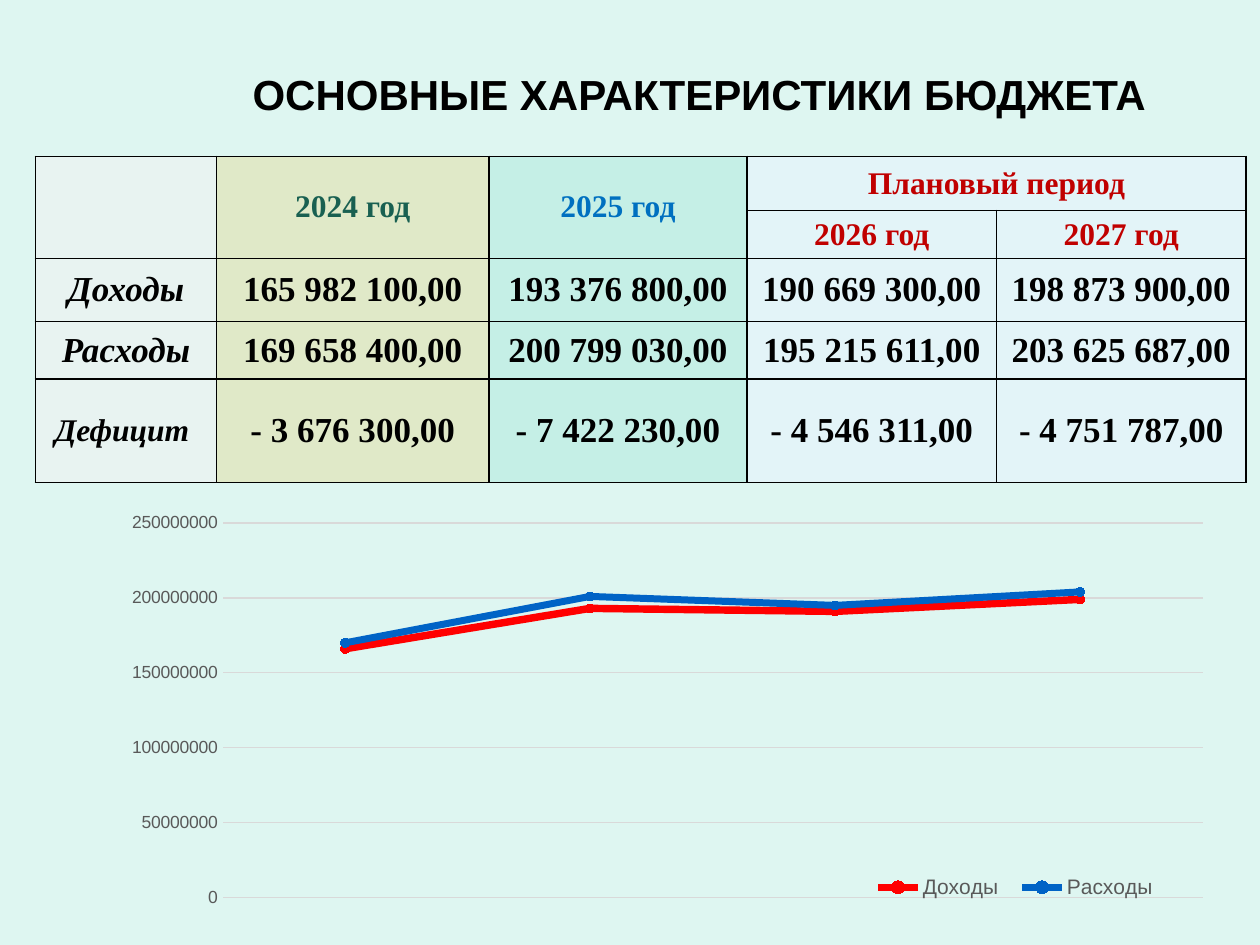
from dataclasses import dataclass

from lxml import etree
from pptx import Presentation
from pptx.chart import data as chart_data
from pptx.dml.color import RGBColor
from pptx.enum import chart as ch, text
from pptx.oxml import ns
from pptx.util import Inches, Pt


@dataclass(frozen=True)
class Theme:
    background: str = "DEF6F1"
    ink: str = "000000"
    chart_text: str = "595959"
    grid: str = "D9D9D9"
    past: str = "196051"
    current: str = "0070C0"
    planned: str = "C00000"
    income: str = "FF0000"
    expense: str = "0063C6"
    sans: str = "Arial"
    serif: str = "Times New Roman"
    title_size: int = 24
    header_size: int = 18
    value_size: int = 20
    axis_size: int = 10
    legend_size: int = 12


THEME = Theme()

# Fill colour and opacity in percent for each table column
COLUMN_FILLS = [("F2F2F2", 53), ("E6CC6C", 30), ("8CE1CF", 30),
                ("E8F4FF", 50), ("E8F4FF", 50)]
COLUMN_WIDTHS = [1.44, 2.16, 2.05, 1.98, 1.98]
ROW_HEIGHTS = [0.43, 0.38, 0.5, 0.46, 0.82]
HEADERS = [
    (0, 1, "2024 год", THEME.past),
    (0, 2, "2025 год", THEME.current),
    (0, 3, "Плановый период", THEME.planned),
    (1, 3, "2026 год", THEME.planned),
    (1, 4, "2027 год", THEME.planned),
]
BUDGET_ROWS = [
    ("Доходы", "165 982 100,00", "193 376 800,00", "190 669 300,00", "198 873 900,00"),
    ("Расходы", "169 658 400,00", "200 799 030,00", "195 215 611,00", "203 625 687,00"),
    ("Дефицит ", "- 3 676 300,00", "- 7 422 230,00", "- 4 546 311,00", "- 4 751 787,00"),
]
MILLION = 1_000_000
# Name, values in millions, colour, line width
SERIES = [
    ("Доходы", (166, 193, 191, 199), THEME.income, 4.25),
    ("Расходы", (170, 201, 195, 204), THEME.expense, 4),
]


def rgb(color):
    return RGBColor.from_string(color)


def set_font(font, name, size, color, bold=False, italic=False):
    font.name = name
    font.size = Pt(size)
    font.bold = bold
    font.italic = italic
    font.color.rgb = rgb(color)


def add_title(slide, words):
    box = slide.shapes.add_textbox(Inches(1.55), Inches(0.4), Inches(8), Inches(0.69))
    frame = box.text_frame
    frame.word_wrap = True
    frame.vertical_anchor = text.MSO_ANCHOR.MIDDLE
    frame.text = words
    para = frame.paragraphs[0]
    para.alignment = text.PP_ALIGN.CENTER
    set_font(para.runs[0].font, THEME.sans, THEME.title_size, THEME.ink, bold=True)


def style_cell(cell, color, opacity):
    """Give a cell its translucent fill, thin borders and margins."""
    cell.fill.solid()
    cell.fill.fore_color.rgb = rgb(color)
    properties = cell._tc.get_or_add_tcPr()
    fill_color = properties.find(f".//{ns.qn('a:srgbClr')}")
    etree.SubElement(fill_color, ns.qn("a:alpha"), val=str(opacity * 1000))
    for position, side in enumerate(("lnL", "lnR", "lnT", "lnB")):
        border = etree.Element(ns.qn(f"a:{side}"), w=str(Pt(1)))
        solid = etree.SubElement(border, ns.qn("a:solidFill"))
        etree.SubElement(solid, ns.qn("a:srgbClr"), val=THEME.ink)
        properties.insert(position, border)
    cell.margin_left = cell.margin_right = Inches(0.07)
    cell.margin_top = cell.margin_bottom = 0
    cell.vertical_anchor = text.MSO_ANCHOR.MIDDLE


def write_cell(cell, words, size, color, italic=False):
    cell.text_frame.text = words
    para = cell.text_frame.paragraphs[0]
    para.alignment = text.PP_ALIGN.CENTER
    set_font(para.runs[0].font, THEME.serif, size, color, bold=True, italic=italic)


def add_budget_table(slide):
    frame = slide.shapes.add_table(
        len(ROW_HEIGHTS), len(COLUMN_WIDTHS), Inches(0.28), Inches(1.24),
        Inches(sum(COLUMN_WIDTHS)), Inches(sum(ROW_HEIGHTS)))
    table = frame.table
    table.first_row = table.horz_banding = False
    for column, width in zip(table.columns, COLUMN_WIDTHS):
        column.width = Inches(width)
    for row, height in zip(table.rows, ROW_HEIGHTS):
        row.height = Inches(height)
        for cell, (color, opacity) in zip(row.cells, COLUMN_FILLS):
            style_cell(cell, color, opacity)
    for column in range(3):
        table.cell(0, column).merge(table.cell(1, column))
    table.cell(0, 3).merge(table.cell(0, 4))

    for row, column, words, color in HEADERS:
        write_cell(table.cell(row, column), words, THEME.header_size, color)
    for row, (label, *amounts) in enumerate(BUDGET_ROWS, start=2):
        is_last = row == len(ROW_HEIGHTS) - 1
        label_size = THEME.header_size if is_last else THEME.value_size
        write_cell(table.cell(row, 0), label, label_size, THEME.ink, italic=True)
        for column, amount in enumerate(amounts, start=1):
            write_cell(table.cell(row, column), amount, THEME.value_size, THEME.ink)


def set_layout(parent, left, top, width, height, inner=False):
    """Place a chart part by fractions of the chart's size."""
    for old in parent.findall(ns.qn("c:layout")):
        parent.remove(old)
    layout = etree.Element(ns.qn("c:layout"))
    manual = etree.SubElement(layout, ns.qn("c:manualLayout"))
    settings = [("layoutTarget", "inner")] if inner else []
    settings += [("xMode", "edge"), ("yMode", "edge"),
                 ("x", left), ("y", top), ("w", width), ("h", height)]
    for tag, value in settings:
        etree.SubElement(manual, ns.qn(f"c:{tag}"), val=str(value))
    position = 0 if inner else 1
    parent.insert(position, layout)


def style_axes(chart):
    chart.category_axis.visible = False
    axis = chart.value_axis
    axis.minimum_scale = 0
    axis.maximum_scale = 250 * MILLION
    axis.major_unit = 50 * MILLION
    axis.major_tick_mark = axis.minor_tick_mark = ch.XL_TICK_MARK.NONE
    axis.tick_labels.number_format = "0"
    axis.tick_labels.number_format_is_linked = False
    axis.format.line.fill.background()
    axis.major_gridlines.format.line.color.rgb = rgb(THEME.grid)
    axis.major_gridlines.format.line.width = Pt(0.75)
    set_font(axis.tick_labels.font, THEME.sans, THEME.axis_size, THEME.chart_text)


def style_series(series, color, width):
    series.smooth = False
    series.format.line.color.rgb = rgb(color)
    series.format.line.width = Pt(width)
    marker = series.marker
    marker.style = ch.XL_MARKER_STYLE.CIRCLE
    marker.size = 5
    marker.format.fill.solid()
    marker.format.fill.fore_color.rgb = rgb(color)
    marker.format.line.color.rgb = rgb(color)


def add_budget_chart(slide):
    data = chart_data.CategoryChartData()
    data.categories = ["1", "2", "3", "4"]
    for name, millions, _, _ in SERIES:
        data.add_series(name, [value * MILLION for value in millions])
    chart = slide.shapes.add_chart(
        ch.XL_CHART_TYPE.LINE_MARKERS, Inches(0.98), Inches(3.99),
        Inches(8.74), Inches(3.23), data).chart
    chart.has_title = False
    set_font(chart.font, THEME.sans, THEME.axis_size, THEME.ink)
    chart.plots[0].vary_by_categories = False
    style_axes(chart)
    for series, (_, _, color, width) in zip(chart.plots[0].series, SERIES):
        style_series(series, color, width)
    chart.has_legend = True
    legend = chart.legend
    legend.position = ch.XL_LEGEND_POSITION.BOTTOM
    legend.include_in_layout = False
    set_font(legend.font, THEME.sans, THEME.legend_size, THEME.chart_text)
    set_layout(legend._element, 0.67, 0.9, 0.28, 0.09)
    plot_area = chart._chartSpace.chart.plotArea
    set_layout(plot_area, 0.09, 0.05, 0.89, 0.92, inner=True)


def main():
    deck = Presentation()
    deck.slide_width, deck.slide_height = Inches(10), Inches(7.5)
    slide = deck.slides.add_slide(deck.slide_layouts[6])
    slide.background.fill.solid()
    slide.background.fill.fore_color.rgb = rgb(THEME.background)
    add_title(slide, "ОСНОВНЫЕ ХАРАКТЕРИСТИКИ БЮДЖЕТА")
    add_budget_table(slide)
    add_budget_chart(slide)
    deck.save("out.pptx")


if __name__ == "__main__":
    main()
